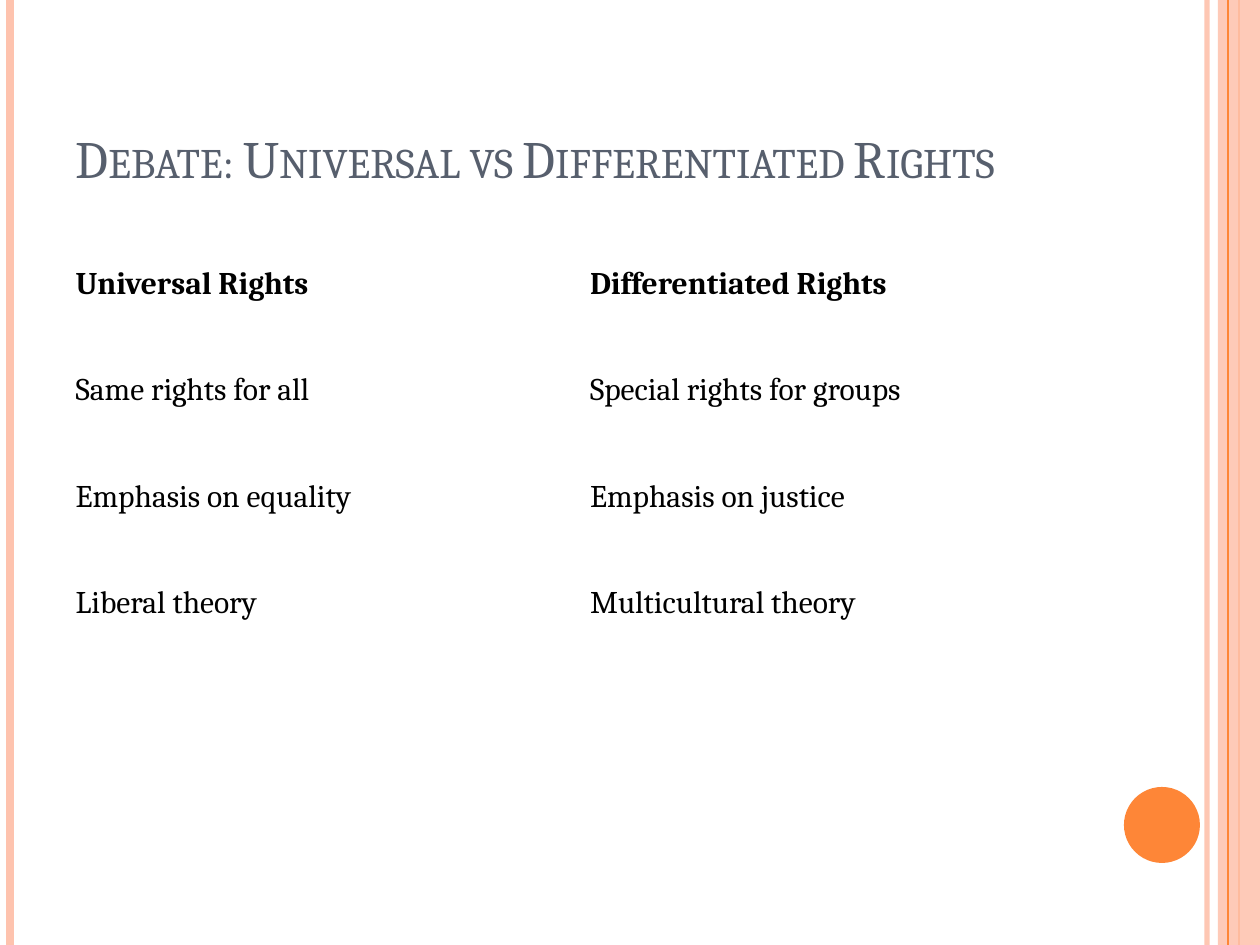
import pptx
import pptx.dml.color
import pptx.enum.shapes
import pptx.enum.text
import pptx.oxml.ns
import pptx.oxml.xmlchemy
import pptx.util

RGBColor = pptx.dml.color.RGBColor
SHAPE = pptx.enum.shapes.MSO_SHAPE
ANCHOR = pptx.enum.text.MSO_ANCHOR

PEACH = RGBColor(0xFE, 0xC3, 0xAE)
ORANGE = RGBColor(0xFE, 0x86, 0x37)
SLATE = RGBColor(0x57, 0x5F, 0x6D)
BLACK = RGBColor(0, 0, 0)
FONT = "Cambria"
SCALE = 914400 // 126
WIDTH, HEIGHT = 1260, 945

TITLE = "Debate: Universal vs Differentiated Rights"
RIGHTS = [
    ("Universal Rights", "Differentiated Rights"),
    ("Same rights for all", "Special rights for groups"),
    ("Emphasis on equality", "Emphasis on justice"),
    ("Liberal theory", "Multicultural theory"),
]
TITLE_BOX = (63, 38, 1029, 157)
TABLE_BOX = (63, 231, 1029, 426)
STRIPES_BEHIND = [(1207, PEACH, 3, 93), (10, PEACH, 4.5, 100), (1239, ORANGE, 1.5, 100)]
BAND_BOX = (1218, 0, 42, HEIGHT)
STRIPE_IN_FRONT = (1228, ORANGE, 0.75, 100)
DISC_BOX = (1124, 787, 76, 76)


def px(*values):
    return [pptx.util.Emu(v * SCALE) for v in values]


def set_alpha(sp, percent):
    if percent < 100:
        color = sp._element.spPr.find(".//" + pptx.oxml.ns.qn("a:srgbClr"))
        alpha = pptx.oxml.xmlchemy.OxmlElement("a:alpha")
        alpha.set("val", str(percent * 1000))
        color.append(alpha)


def add_stripe(slide, x, color, weight, opacity):
    line = slide.shapes.add_connector(
        pptx.enum.shapes.MSO_CONNECTOR.STRAIGHT, *px(x, 0, x, HEIGHT))
    line.line.color.rgb = color
    line.line.width = pptx.util.Pt(weight)
    set_alpha(line, opacity)
    line._element.spPr.append(pptx.oxml.xmlchemy.OxmlElement("a:effectLst"))


def add_solid(slide, kind, box, color, opacity=100):
    sp = slide.shapes.add_shape(kind, *px(*box))
    sp.shadow.inherit = False
    sp.fill.solid()
    sp.fill.fore_color.rgb = color
    sp.line.fill.background()
    set_alpha(sp, opacity)


def style_font(font, size, color, bold=False):
    font.name = FONT
    font.size = pptx.util.Pt(size)
    font.color.rgb = color
    font.bold = bold


def add_title(slide):
    title = slide.shapes.title
    title.left, title.top, title.width, title.height = px(*TITLE_BOX)
    tf = title.text_frame
    tf.text = TITLE
    tf.word_wrap = True
    tf.vertical_anchor = ANCHOR.BOTTOM
    p = tf.paragraphs[0]
    p.alignment = pptx.enum.text.PP_ALIGN.LEFT
    r = p.runs[0]
    style_font(r.font, 30, SLATE)
    r._r.get_or_add_rPr().set("cap", "small")


def add_rights_table(slide):
    table = slide.shapes.add_table(len(RIGHTS), len(RIGHTS[0]), *px(*TABLE_BOX)).table
    table.horz_banding = False
    table.first_row = False
    for i, row in enumerate(RIGHTS):
        for j, text in enumerate(row):
            cell = table.cell(i, j)
            cell.fill.background()
            cell.vertical_anchor = ANCHOR.MIDDLE
            cell.text_frame.text = text
            r = cell.text_frame.paragraphs[0].runs[0]
            style_font(r.font, 18, BLACK, bold=i == 0)


def main():
    prs = pptx.Presentation()
    prs.slide_width, prs.slide_height = px(WIDTH, HEIGHT)
    slide = prs.slides.add_slide(prs.slide_layouts[5])
    for stripe in STRIPES_BEHIND:
        add_stripe(slide, *stripe)
    add_solid(slide, SHAPE.RECTANGLE, BAND_BOX, PEACH, 87)
    add_stripe(slide, *STRIPE_IN_FRONT)
    add_solid(slide, SHAPE.OVAL, DISC_BOX, ORANGE)
    add_title(slide)
    add_rights_table(slide)
    prs.save("out.pptx")


if __name__ == "__main__":
    main()
